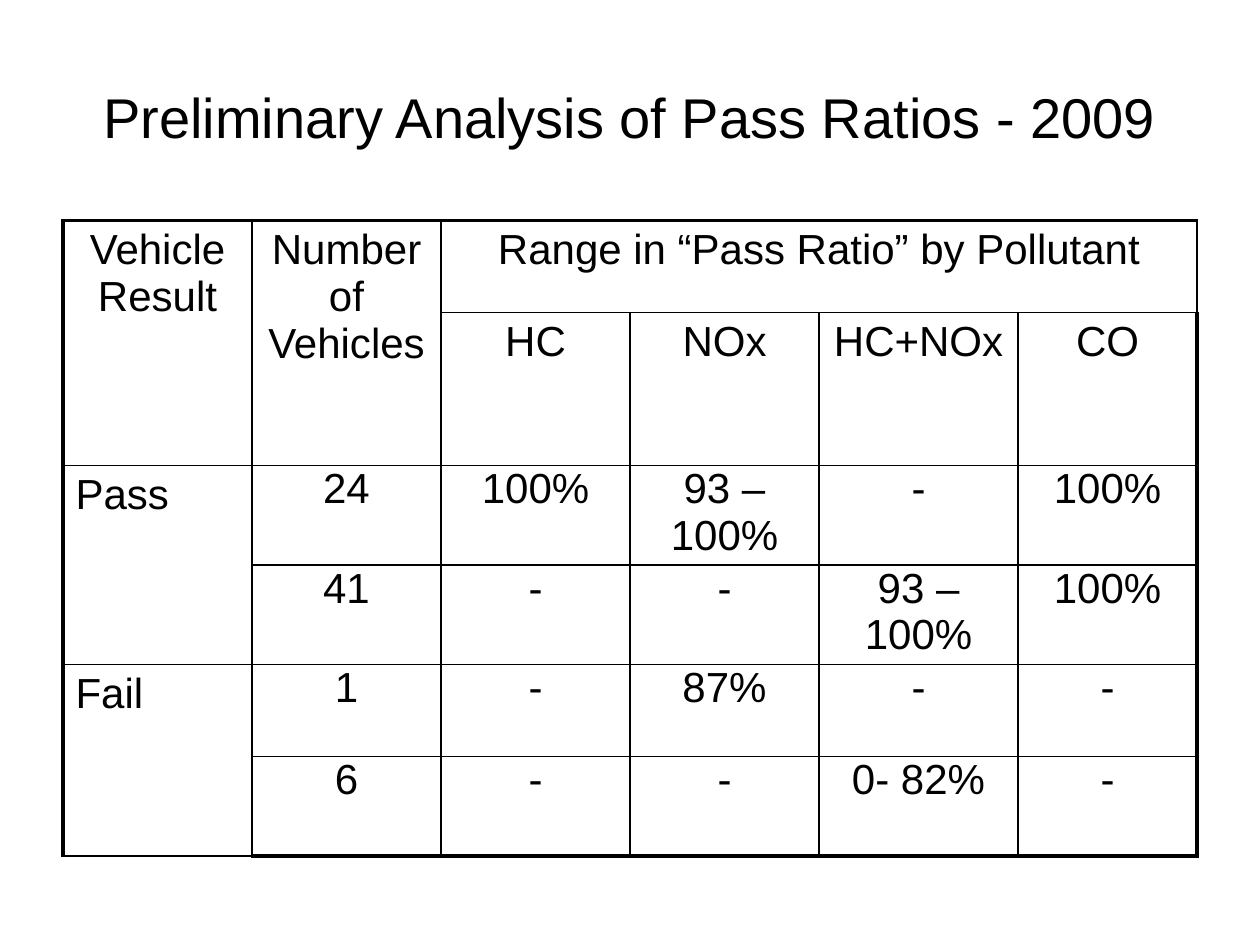
from lxml import etree
from pptx import Presentation
from pptx import util as u
from pptx.dml.color import RGBColor
from pptx.enum import text
from pptx.oxml.ns import qn

COLORS = {"ink": "000000", "background": "FFFFFF"}
COLUMN_WIDTHS = [1.5, 1.5, 1.5, 1.5, 1.58, 1.42]
ROW_HEIGHTS = [0.73, 0.89, 0.79, 0.79, 0.73, 0.79]
HEADER_ROWS = 2
ROWS = [
    ["Vehicle Result", "Number of Vehicles", "Range in “Pass Ratio” by Pollutant", "", "", ""],
    ["", "", "HC", "NOx", "HC+NOx", "CO"],
    ["Pass", "24", "100%", "93 – 100%", "-", "100%"],
    ["", "41", "-", "-", "93 – 100%", "100%"],
    ["Fail", "1", "-", "87%", "-", "-"],
    ["", "6", "-", "-", "0- 82%", "-"],
]
# First and last cell of each merged block, as (row, column)
MERGES = [((0, 0), (1, 0)), ((0, 1), (1, 1)), ((0, 2), (0, 5)), ((2, 0), (3, 0)), ((4, 0), (5, 0))]


def style_paragraph(paragraph, size, alignment):
    paragraph.alignment = alignment
    paragraph.font.name = "Arial"
    paragraph.font.size = u.Pt(size)
    paragraph.font.bold = False
    paragraph.font.color.rgb = RGBColor.from_string(COLORS["ink"])


def add_borders(cell, widths):
    """Draw cell borders; widths maps lnL, lnR, lnT and lnB to points."""
    properties = cell._tc.get_or_add_tcPr()
    for position, (side, width) in enumerate(widths.items()):
        line = etree.Element(qn(f"a:{side}"), w=str(u.Pt(width)))
        fill = etree.SubElement(line, qn("a:solidFill"))
        etree.SubElement(fill, qn("a:srgbClr"), val=COLORS["ink"])
        properties.insert(position, line)


presentation = Presentation()
presentation.slide_width = u.Inches(10)
presentation.slide_height = u.Inches(7.5)
slide = presentation.slides.add_slide(presentation.slide_layouts[6])
slide.background.fill.solid()
slide.background.fill.fore_color.rgb = RGBColor.from_string(COLORS["background"])

table = slide.shapes.add_table(
    len(ROWS), len(COLUMN_WIDTHS), u.Inches(0.5), u.Inches(1.75), u.Inches(9), u.Inches(4.75)
).table
table.first_row = False
table.horz_banding = False
for column, width in zip(table.columns, COLUMN_WIDTHS):
    column.width = u.Inches(width)
for row, height in zip(table.rows, ROW_HEIGHTS):
    row.height = u.Inches(height)
for first, last in MERGES:
    table.cell(*first).merge(table.cell(*last))

last_row, last_column = len(ROWS) - 1, len(COLUMN_WIDTHS) - 1
for row_index, values in enumerate(ROWS):
    for column_index, value in enumerate(values):
        cell = table.cell(row_index, column_index)
        cell.fill.background()
        is_label = row_index < HEADER_ROWS or column_index == 0
        if not is_label:
            cell.margin_left = cell.margin_right = cell.margin_top = cell.margin_bottom = 0
        is_result = row_index >= HEADER_ROWS and column_index == 0
        alignment = text.PP_ALIGN.LEFT if is_result else text.PP_ALIGN.CENTER
        paragraph = cell.text_frame.paragraphs[0]
        if value:
            paragraph.text = value
        style_paragraph(paragraph, 24, alignment)
        if is_label:
            space_before = etree.Element(qn("a:spcBef"))
            etree.SubElement(space_before, qn("a:spcPct"), val="20000")
            paragraph._p.get_or_add_pPr().insert(0, space_before)
        outer_sides = {
            "lnL": column_index == 0,
            "lnR": column_index == last_column,
            "lnT": row_index == 0,
            "lnB": row_index == last_row,
        }
        add_borders(cell, {side: 2.25 if outer else 1 for side, outer in outer_sides.items()})

title = slide.shapes.add_textbox(u.Inches(0.5), u.Inches(0.3), u.Inches(9), u.Inches(1.25))
title.text_frame.word_wrap = True
title.text_frame.vertical_anchor = text.MSO_ANCHOR.MIDDLE
title_paragraph = title.text_frame.paragraphs[0]
title_paragraph.text = "Preliminary Analysis of Pass Ratios - 2009"
style_paragraph(title_paragraph, 32, text.PP_ALIGN.CENTER)

presentation.save("out.pptx")
